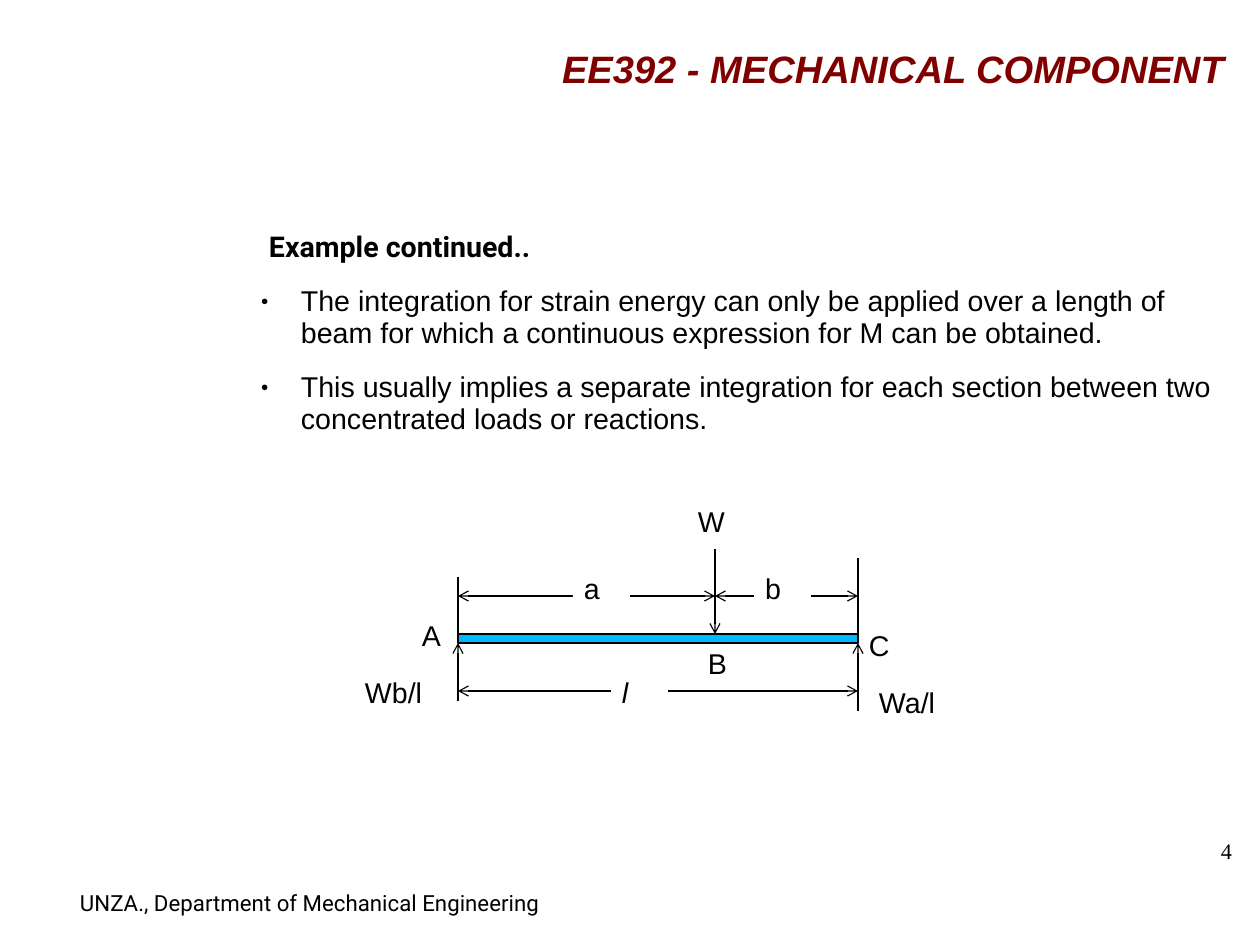
from pptx import Presentation
from pptx.dml.color import RGBColor as RGB
from pptx.enum.shapes import MSO_CONNECTOR as CONN, MSO_SHAPE as SHAPE
from pptx.enum.text import MSO_ANCHOR as ANCHOR, MSO_AUTO_SIZE as AUTO, PP_ALIGN as ALIGN
from pptx.oxml.ns import qn
from pptx.util import Pt
from lxml.etree import SubElement as Sub

PX = 8000
BLACK = "000000"


def color(code):
    return RGB.from_string(code)


def write(shape, text, size, face, space, pad=(0, 0, 0, 0), align=ALIGN.LEFT, ink=BLACK):
    frame = shape.text_frame
    frame.word_wrap = True
    frame.auto_size = AUTO.NONE
    frame.vertical_anchor = ANCHOR.TOP
    frame.margin_left, frame.margin_top, frame.margin_right, frame.margin_bottom = [
        n * PX for n in pad]
    frame.text = text
    for para in frame.paragraphs:
        para.alignment = align
        para.line_spacing = space
        para.font.size = Pt(size)
        para.font.name = face
        para.font.color.rgb = color(ink)
    return frame


deck = Presentation()
deck.slide_width, deck.slide_height = 1260 * PX, 945 * PX
slide = deck.slides.add_slide(deck.slide_layouts[5])
shapes = slide.shapes

title = shapes.title
title.left, title.top, title.width, title.height = [n * PX for n in (455, 38, 769, 63)]
frame = write(title, "EE392 - MECHANICAL COMPONENT", 24, "Arial", 0.93,
              (0, 2, 0, 0), ALIGN.RIGHT, "800000")
frame.vertical_anchor = ANCHOR.MIDDLE
frame.paragraphs[0].font.bold = True
frame.paragraphs[0].font.italic = True

page = shapes.add_textbox(*[n * PX for n in (939, 839, 293, 64)])
write(page, "4", 14, "Times New Roman", 0.95, align=ALIGN.RIGHT)
foot = shapes.add_textbox(*[n * PX for n in (69, 880, 606, 49)])
write(foot, "UNZA., Department of Mechanical Engineering", 14, "Roboto", 1.12, (11, 6, 11, 6))

body = shapes.add_textbox(*[n * PX for n in (247, 221, 972, 475)])
lines = [
    "Example continued..",
    "The integration for strain energy can only be applied over a length of beam "
    "for which a continuous expression for M can be obtained.",
    "This usually implies a separate integration for each section between two "
    "concentrated loads or reactions.",
]
head, *points = write(body, "\n".join(lines), 18, "Arial", 0.93, (0, 4, 0, 0)).paragraphs
head.line_spacing = 1.12
head.font.name = "Roboto"
head.font.bold = True
for para, first in [(head, -32)] + [(point, -40) for point in points]:
    para.space_after = Pt(14.2)
    props = para._p.get_or_add_pPr()
    props.set("marL", str(54 * PX))
    props.set("indent", str(first * PX))
for point in points:
    props = point._p.pPr
    tint = Sub(props, qn("a:buClr"))
    Sub(tint, qn("a:srgbClr"), val=BLACK)
    Sub(props, qn("a:buSzPct"), val="45000")
    Sub(props, qn("a:buFont"), typeface="Arial")
    Sub(props, qn("a:buChar"), char="●")
    props.append(props.find(qn("a:defRPr")))

left, load, right = 458, 715, 858
top, base = 634, 643
END, BOTH = ["tailEnd"], ["headEnd", "tailEnd"]
for x1, y1, x2, y2, tips in [
    (left, 701, left, base, END),
    (right, 711, right, base, END),
    (load, 549, load, top, END),
    (left, top, left, 577, []),
    (right, top, right, 558, []),
    (left, 596, load, 596, BOTH),
    (load, 596, right, 596, BOTH),
    (left, 691, right, 691, BOTH),
]:
    rule = shapes.add_connector(CONN.STRAIGHT, x1 * PX, y1 * PX, x2 * PX, y2 * PX)
    rule.line.color.rgb = color(BLACK)
    rule.line.width = Pt(0.75)
    for tip in tips:
        Sub(rule.line._get_or_add_ln(), qn("a:" + tip), type="arrow")
    Sub(rule._element.spPr, qn("a:effectLst"))

beam = shapes.add_shape(SHAPE.RECTANGLE, left * PX, top * PX,
                        (right - left) * PX, (base - top) * PX)
beam.shadow.inherit = False
beam.fill.solid()
beam.fill.fore_color.rgb = color("00B8FF")
beam.line.color.rgb = color(BLACK)
beam.line.width = Pt(0.75)

for text, x, y, wide in [
    ("A", 411, 615, 77), ("B", 697, 643, 48), ("C", 858, 625, 77),
    ("W", 687, 501, 57), ("Wa/l", 868, 682, 105), ("Wb/l", 354, 672, 86),
    ("a", 573, 568, 57), ("b", 754, 568, 57), ("l", 611, 672, 57),
]:
    spot = x * PX, y * PX, wide * PX, 43 * PX
    if text in "abl":
        label = shapes.add_shape(SHAPE.RECTANGLE, *spot)
        label.shadow.inherit = False
        label.fill.solid()
        label.fill.fore_color.rgb = color("FFFFFF")
        label.line.fill.background()
    else:
        label = shapes.add_textbox(*spot)
    frame = write(label, text, 18, "Arial", 0.93, (11, 6, 11, 6))
    frame.paragraphs[0].font.italic = text == "l"

deck.save("out.pptx")
